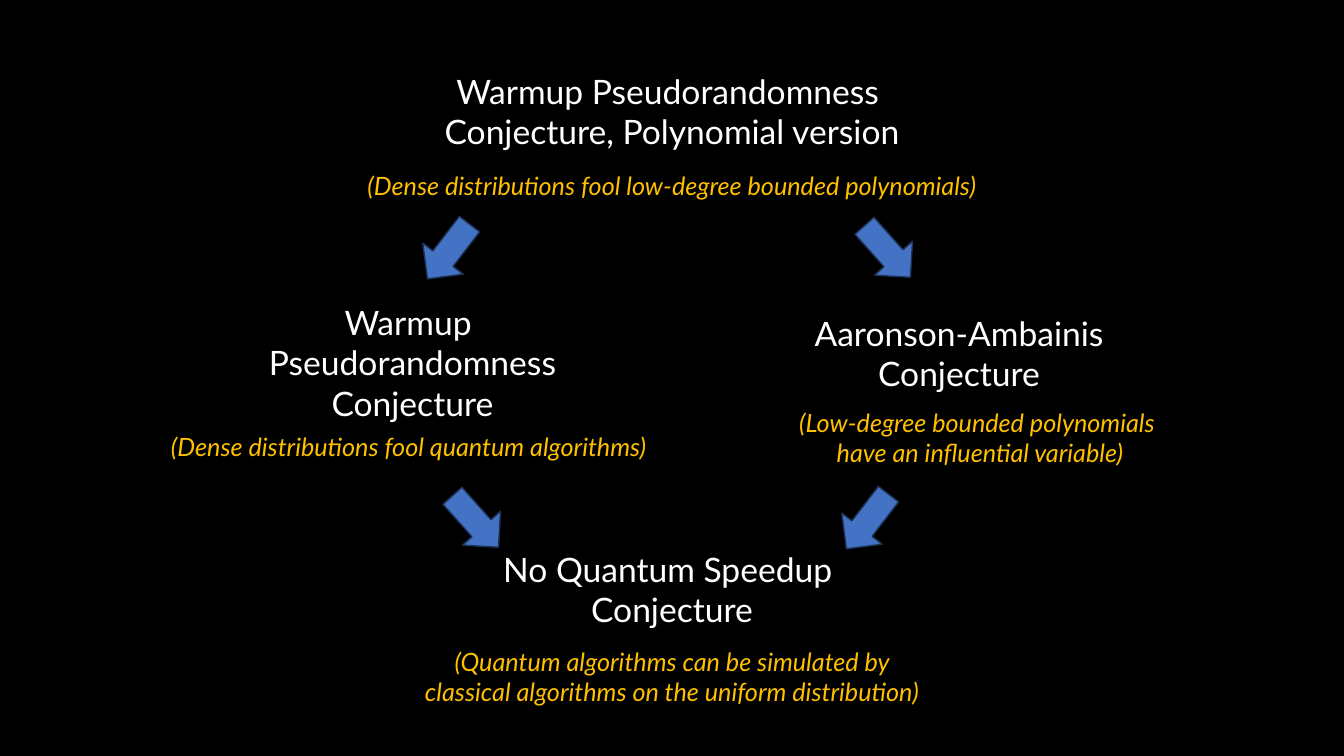
from pptx import Presentation
from pptx.dml.color import RGBColor
from pptx.enum.shapes import MSO_SHAPE as Shape
from pptx.enum.text import MSO_AUTO_SIZE as AutoSize, PP_ALIGN as Align
from pptx.util import Pt

SLIDE_WIDTH, SLIDE_HEIGHT = 1344, 756
EMU_PER_PX = 12192000 / SLIDE_WIDTH

COLORS = {
    "background": "000000",
    "conjecture": "FFFFFF",
    "meaning": "FFC000",
    "arrow": "4472C4",
    "arrow_edge": "1E3256",
}
CONJECTURE_FORMAT = {"name": "Lato", "size": Pt(24), "italic": False}
MEANING_FORMAT = {"name": "Lato", "size": Pt(18), "italic": True}

ARROW_WIDTH, ARROW_HEIGHT = 51, 69
TOP_ARROWS, BOTTOM_ARROWS = 217, 487
DOWN_LEFT, DOWN_RIGHT = 37.5, 318.2

# Box (left, top, width, height), then one string per paragraph
CONJECTURES = [
    ((364, 66, 616, 92), ["Warmup Pseudorandomness \nConjecture, Polynomial version"]),
    ((183, 297, 459, 132), ["Warmup ", "Pseudorandomness Conjecture"]),
    ((739, 308, 440, 92), ["Aaronson-Ambainis Conjecture"]),
    ((408, 544, 528, 92), ["No Quantum Speedup \nConjecture"]),
]
MEANINGS = [
    ((339, 165, 666, 40), "(Dense distributions fool low-degree bounded polynomials)", Align.CENTER),
    ((161, 426, 528, 40), "(Dense distributions fool quantum algorithms)", Align.LEFT),
    ((716, 402, 528, 72), "(Low-degree bounded polynomials \nhave an influential variable)", Align.CENTER),
    ((408, 641, 528, 72), "(Quantum algorithms can be simulated by "
                          "classical algorithms on the uniform distribution)", Align.CENTER),
]
ARROWS = [
    (423, TOP_ARROWS, DOWN_LEFT),
    (862, TOP_ARROWS, DOWN_RIGHT),
    (842, BOTTOM_ARROWS, DOWN_LEFT),
    (450, BOTTOM_ARROWS, DOWN_RIGHT),
]


def px(*lengths):
    return [round(length * EMU_PER_PX) for length in lengths]


def color(name):
    return RGBColor.from_string(COLORS[name])


def add_text(slide, box, paragraphs, color_name, font_format, alignment=Align.CENTER):
    """Add a text box; a newline inside a paragraph is a line break."""
    frame = slide.shapes.add_textbox(*px(*box)).text_frame
    frame.word_wrap = True
    frame.auto_size = AutoSize.SHAPE_TO_FIT_TEXT
    for index, text in enumerate(paragraphs):
        paragraph = frame.add_paragraph() if index else frame.paragraphs[0]
        paragraph.text = text
        paragraph.alignment = alignment
        for run in paragraph.runs:
            for attribute, value in font_format.items():
                setattr(run.font, attribute, value)
            run.font.color.rgb = color(color_name)


def add_arrow(slide, left, top, rotation):
    arrow = slide.shapes.add_shape(
        Shape.DOWN_ARROW, *px(left, top, ARROW_WIDTH, ARROW_HEIGHT))
    arrow.rotation = rotation
    arrow.shadow.inherit = False
    arrow.fill.solid()
    arrow.fill.fore_color.rgb = color("arrow")
    arrow.line.color.rgb = color("arrow_edge")
    arrow.line.width = Pt(1)


def main():
    presentation = Presentation()
    presentation.slide_width, presentation.slide_height = px(SLIDE_WIDTH, SLIDE_HEIGHT)
    slide = presentation.slides.add_slide(presentation.slide_layouts[6])
    slide.background.fill.solid()
    slide.background.fill.fore_color.rgb = color("background")

    for box, paragraphs in CONJECTURES:
        add_text(slide, box, paragraphs, "conjecture", CONJECTURE_FORMAT)
    for box, text, alignment in MEANINGS:
        add_text(slide, box, [text], "meaning", MEANING_FORMAT, alignment)
    for left, top, rotation in ARROWS:
        add_arrow(slide, left, top, rotation)

    presentation.save("out.pptx")


if __name__ == "__main__":
    main()
